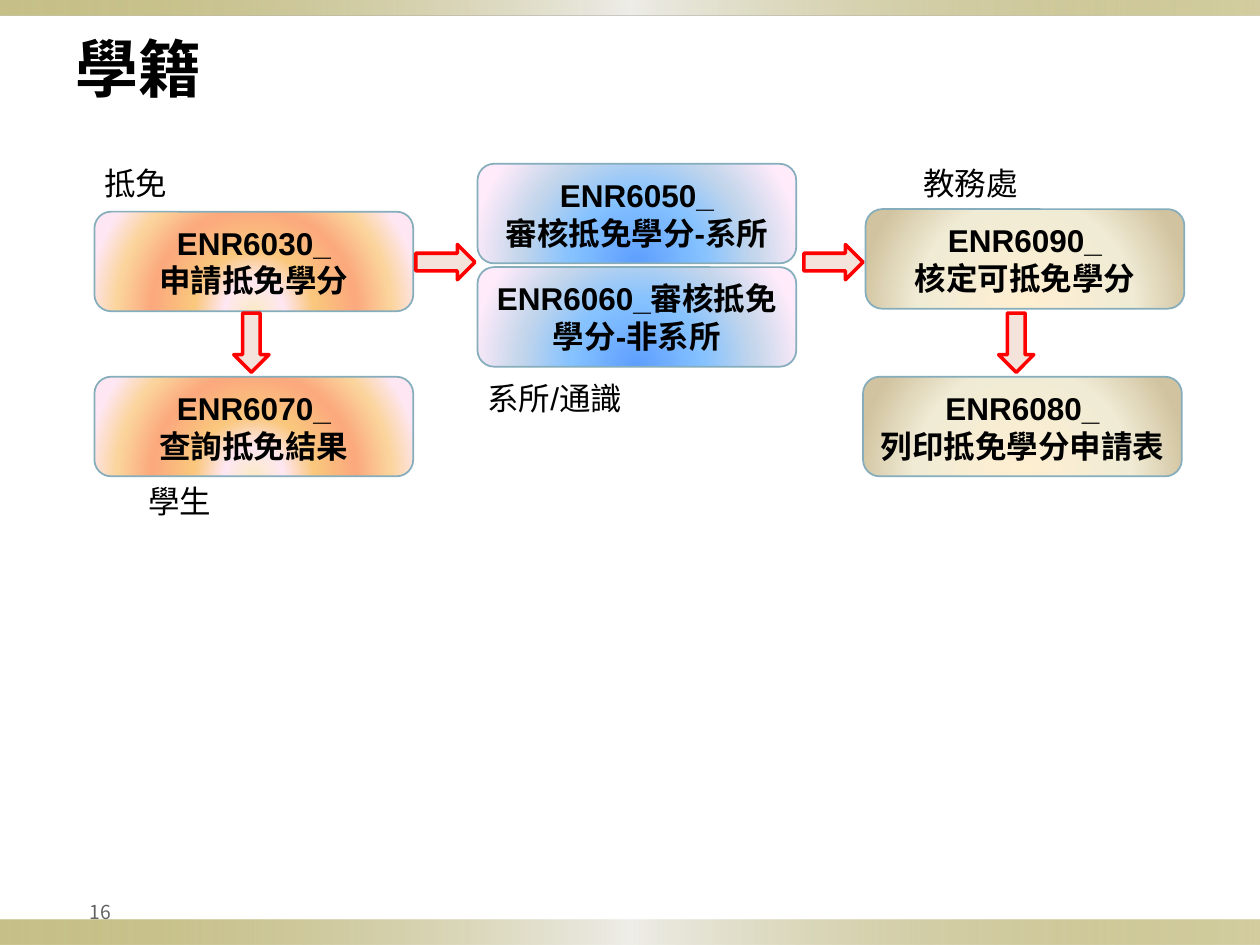
from lxml import etree
from pptx import Presentation
from pptx.dml.color import RGBColor
from pptx.enum.shapes import MSO_SHAPE
from pptx.enum.text import MSO_ANCHOR, PP_ALIGN
from pptx.oxml import parse_xml
from pptx.oxml.ns import nsdecls, qn
from pptx.util import Inches, Pt

RECT, ROUNDED, ARROW = MSO_SHAPE.RECTANGLE, MSO_SHAPE.ROUNDED_RECTANGLE, MSO_SHAPE.RIGHT_ARROW
TOP, MIDDLE = MSO_ANCHOR.TOP, MSO_ANCHOR.MIDDLE
LEFT, CENTER, RIGHT = PP_ALIGN.LEFT, PP_ALIGN.CENTER, PP_ALIGN.RIGHT

COLORS = {
    "text": "000000",
    "number": "636363",
    "step_line": "85ADBC",
    "arrow_fill": "F3E3DA",
    "arrow_line": "FF0000",
}
# Gradient stops: position, colour, opacity (all in percent)
BAND = [(0, "918415", 50), (50, "EEEDE8", 100), (100, "918415", 40)]
STUDENT = [(0, "FBEAC7", 100), (18, "FEE7F2", 100), (36, "FAC77D", 100),
           (61, "FBA97D", 100), (82, "FBD49C", 100), (100, "FEE7F2", 100)]
DEPARTMENT = [(0, "5E9EFF", 100), (40, "85C2FF", 100), (70, "C4D6EB", 100), (100, "FFEBFA", 100)]
OFFICE = [(0, "FFEFD1", 100), (65, "F0EBD5", 100), (100, "D1C39F", 100)]

LINEAR = '<a:lin ang="0" scaled="0"/>'
RADIAL = '<a:path path="circle"><a:fillToRect l="50000" t="100000" r="50000"/></a:path>'
CJK_FONT = "Noto Sans CJK SC"
STEP_SIZE = (2.53, 0.79)
ARROW_SIZE = (0.47, 0.28)

STEPS = [
    (0.75, 1.68, STUDENT, ["ENR6030_", "申請抵免學分"]),
    (0.75, 2.99, STUDENT, ["ENR6070_", "查詢抵免結果"]),
    (3.79, 1.3, DEPARTMENT, ["ENR6050_", "審核抵免學分-系所"]),
    (3.79, 2.12, DEPARTMENT, ["ENR6060_審核抵免學分-非系所"]),
    (6.87, 1.66, OFFICE, ["ENR6090_", "核定可抵免學分"]),
    (6.85, 2.99, OFFICE, ["ENR6080_", "列印抵免學分申請表"]),
]
ARROWS = [(3.3, 1.94, 0), (6.38, 1.94, 0), (1.76, 2.58, 90), (7.83, 2.58, 90)]
LABELS = [
    (0.73, 1.25, 0.71, "抵免"),
    (1.08, 3.78, 0.71, "學生"),
    (3.77, 2.96, 2.61, "系所/通識"),
    (7.23, 1.25, 0.96, "教務處"),
]


def color(name):
    return RGBColor.from_string(COLORS[name])


def write_text(box, lines, name="Arial", size=18, bold=False, ink="text", align=LEFT, anchor=TOP):
    frame = box.text_frame
    frame.word_wrap = True
    frame.vertical_anchor = anchor
    for index, line in enumerate(lines):
        para = frame.paragraphs[0] if index == 0 else frame.add_paragraph()
        para.alignment = align
        span = para.add_run()
        span.text = line
        for key, value in {"name": name, "size": Pt(size), "bold": bold}.items():
            setattr(span.font, key, value)
        span.font.color.rgb = color(ink)
        east_asian = etree.SubElement(span.font._element, qn("a:ea"))
        east_asian.set("typeface", CJK_FONT)


def add_shape(page, kind, left, top, width, height):
    shape = page.shapes.add_shape(kind, Inches(left), Inches(top), Inches(width), Inches(height))
    shape.shadow.inherit = False
    return shape


def fill_gradient(shape, stops, direction):
    """Put a gradient fill right after the shape's geometry."""
    marks = "".join(
        f'<a:gs pos="{pos * 1000}"><a:srgbClr val="{value}">'
        f'<a:alpha val="{opacity * 1000}"/></a:srgbClr></a:gs>'
        for pos, value, opacity in stops)
    gradient = parse_xml(f'<a:gradFill {nsdecls("a")} rotWithShape="1">'
                         f'<a:gsLst>{marks}</a:gsLst>{direction}</a:gradFill>')
    shape._element.spPr.find(qn("a:prstGeom")).addnext(gradient)


def set_line(shape, name, width):
    shape.line.color.rgb = color(name)
    shape.line.width = Pt(width)


def add_band(page, top, height):
    band = add_shape(page, RECT, 0, top, 10, height)
    fill_gradient(band, BAND, LINEAR)
    band.line.fill.background()


def add_step(page, left, top, stops, lines):
    step = add_shape(page, ROUNDED, left, top, *STEP_SIZE)
    fill_gradient(step, stops, RADIAL)
    set_line(step, "step_line", 1)
    write_text(step, lines, bold=True, align=CENTER, anchor=MIDDLE)


def add_arrow(page, left, top, rotation):
    arrow = add_shape(page, ARROW, left, top, *ARROW_SIZE)
    arrow.rotation = rotation
    arrow.fill.solid()
    arrow.fill.fore_color.rgb = color("arrow_fill")
    set_line(arrow, "arrow_line", 2)


def add_text(page, left, top, width, height, text, margin=None, **formats):
    box = page.shapes.add_textbox(Inches(left), Inches(top), Inches(width), Inches(height))
    if margin is not None:
        for side in ("left", "top", "right", "bottom"):
            setattr(box.text_frame, f"margin_{side}", Inches(margin))
    write_text(box, [text], **formats)


def main():
    deck = Presentation()
    deck.slide_width, deck.slide_height = Inches(10), Inches(7.5)
    page = deck.slides.add_slide(deck.slide_layouts[6])

    add_band(page, 7.3, 0.2)
    add_band(page, 0, 0.12)
    add_text(page, 0, 7.04, 0.93, 0.4, "16", margin=0.05, name=CJK_FONT, size=11,
             ink="number", align=RIGHT, anchor=MIDDLE)
    add_text(page, 0.5, 0.05, 9, 0.97, "學籍", name=CJK_FONT, size=36, bold=True, anchor=MIDDLE)
    for step in STEPS:
        add_step(page, *step)
    for arrow in ARROWS:
        add_arrow(page, *arrow)
    for left, top, width, text in LABELS:
        add_text(page, left, top, width, 0.4, text)

    deck.save("out.pptx")


if __name__ == "__main__":
    main()
